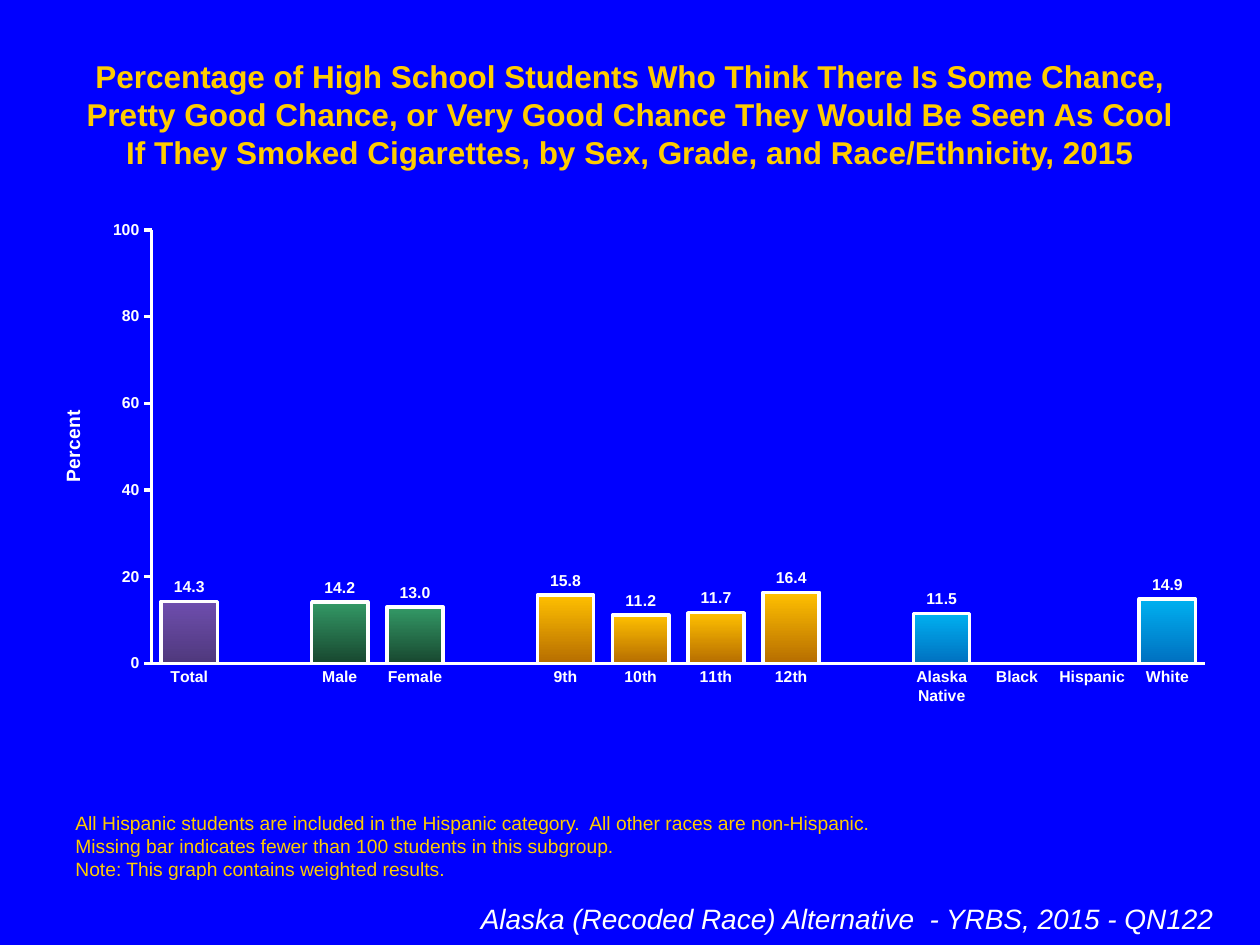
from lxml.etree import SubElement
from pptx import Presentation
from pptx.chart.data import CategoryChartData
from pptx.dml.color import RGBColor
from pptx.enum.chart import XL_CHART_TYPE, XL_LABEL_POSITION, XL_TICK_MARK
from pptx.enum.text import MSO_ANCHOR, PP_ALIGN
from pptx.oxml.ns import qn
from pptx.util import Pt

PX = 914400 // 126
FONT = "Arial"
WHITE, GOLD, BLUE = "FFFFFF", "FFCC00", "0000FF"
PURPLE_FADE = ("6E4EAE", "4F387C")
GREEN_FADE = ("339966", "18472F")
AMBER_FADE = ("FFC000", "B66D00")
SKY_FADE = ("00B0F0", "0070C0")
GROUPS = [
    (PURPLE_FADE, [("Total", 14.3)]),
    (GREEN_FADE, [("Male", 14.2), ("Female", 13.0)]),
    (AMBER_FADE, [("9th", 15.8), ("10th", 11.2), ("11th", 11.7), ("12th", 16.4)]),
    (SKY_FADE, [("Alaska Native", 11.5), ("Black", None), ("Hispanic", None), ("White", 14.9)]),
]
TITLE = (
    "Percentage of High School Students Who Think There Is Some Chance, "
    "Pretty Good Chance, or Very Good Chance They Would Be Seen As Cool "
    "If They Smoked Cigarettes, by Sex, Grade, and Race/Ethnicity, 2015"
)
NOTES = [
    "All Hispanic students are included in the Hispanic category.  All other races are non-Hispanic.",
    "Missing bar indicates fewer than 100 students in this subgroup.",
    "Note: This graph contains weighted results.",
]
SOURCE = "Alaska (Recoded Race) Alternative  - YRBS, 2015 - QN122"


def color(value):
    """Turn a hex string into a colour."""
    return RGBColor.from_string(value)


def style_font(font, size, value=WHITE, bold=False, italic=False):
    """Set the face, size, colour and weight of a font."""
    font.name, font.size, font.bold, font.italic = FONT, Pt(size), bold, italic
    font.color.rgb = color(value)


def style_line(line):
    """Give a line the white stroke shared by axes and bars."""
    line.color.rgb = color(WHITE)
    line.width = Pt(2)


def write_text(box, place, lines, align=PP_ALIGN.LEFT, anchor=MSO_ANCHOR.TOP, **style):
    """Place a text shape and write one paragraph per line."""
    box.left, box.top, box.width, box.height = (length * PX for length in place)
    frame = box.text_frame
    frame.word_wrap = True
    frame.vertical_anchor = anchor
    frame.text = "\n".join(lines)
    for para in frame.paragraphs:
        para.alignment = align
        para.line_spacing = 1.0
        para.space_before = Pt(0)
        for span in para.runs:
            style_font(span.font, **style)


def add_text(page, place, lines, **style):
    """Add a text box to the page."""
    write_text(page.shapes.add_textbox(0, 0, 0, 0), place, lines, **style)


def set_layout(owner, position, **values):
    """Fix the place of a chart part as fractions of the chart."""
    layout = owner.find(qn("c:layout"))
    if layout is None:
        layout = owner.makeelement(qn("c:layout"))
        owner.insert(position, layout)
    manual = SubElement(layout, qn("c:manualLayout"))
    for name, value in values.items():
        SubElement(manual, qn(f"c:{name}")).set("val", str(value))


def style_axis(axis, tick):
    """Format an axis line, its ticks and its labels."""
    axis.has_major_gridlines = False
    axis.major_tick_mark = tick
    axis.minor_tick_mark = XL_TICK_MARK.NONE
    style_line(axis.format.line)
    style_font(axis.tick_labels.font, 9, bold=True)


def add_axis_title(axis, text):
    """Add an upward reading title to the value axis."""
    title = axis.axis_title
    title.text_frame.text = text
    style_font(title.text_frame.paragraphs[0].runs[0].font, 11, bold=True)
    body = title._element.find(".//" + qn("a:bodyPr"))
    body.set("rot", "-5400000")
    body.set("vert", "horz")
    set_layout(title._element, 1, xMode="edge", yMode="edge", x=0.02, y=0.39)


def paint_bar(point, fade):
    """Fill a bar from top to bottom and outline it."""
    fill = point.format.fill
    fill.gradient()
    fill.gradient_angle = 270
    for stop, value, position in zip(fill.gradient_stops, fade, (0, 1)):
        stop.color.rgb = color(value)
        stop.position = position
    style_line(point.format.line)


def list_bars():
    """List label, value and fade of each slot, with a gap between groups."""
    bars = []
    for fade, members in GROUPS:
        if bars:
            bars.append(("", None, None))
        bars += [(label, value, fade) for label, value in members]
    return bars


def add_bar_chart(page, place):
    """Add the column chart of percentages by subgroup."""
    bars = list_bars()
    data = CategoryChartData(number_format="#,##0.0")
    data.categories = [label for label, _, _ in bars]
    data.add_series("Series 1", [value for _, value, _ in bars])
    lengths = [length * PX for length in place]
    chart = page.shapes.add_chart(XL_CHART_TYPE.COLUMN_CLUSTERED, *lengths, data).chart
    chart.has_legend = False
    chart.has_title = False
    style_font(chart.font, 18)

    plot = chart.plots[0]
    plot.gap_width, plot.overlap, plot.vary_by_categories = 34, 100, False
    plot.has_data_labels = True
    labels = plot.data_labels
    labels.show_value = True
    labels.number_format, labels.number_format_is_linked = "#,##0.0", False
    labels.position = XL_LABEL_POSITION.OUTSIDE_END
    style_font(labels.font, 9, bold=True)
    for index, (_, _, fade) in enumerate(bars):
        if fade:
            paint_bar(plot.series[0].points[index], fade)

    style_axis(chart.category_axis, XL_TICK_MARK.NONE)
    values = chart.value_axis
    style_axis(values, XL_TICK_MARK.OUTSIDE)
    values.minimum_scale, values.maximum_scale, values.major_unit = 0, 100, 20
    values.tick_labels.number_format = "General"
    values.tick_labels.number_format_is_linked = False
    add_axis_title(values, "Percent")
    area = chart._chartSpace.find(".//" + qn("c:plotArea"))
    set_layout(area, 0, layoutTarget="inner", xMode="edge", yMode="edge",
               x=0.1, y=0.04, w=0.88, h=0.86)


def main():
    """Build the slide and save the deck."""
    deck = Presentation()
    deck.slide_width, deck.slide_height = 1260 * PX, 945 * PX
    page = deck.slides.add_slide(deck.slide_layouts[5])
    page.background.fill.solid()
    page.background.fill.fore_color.rgb = color(BLUE)
    write_text(page.shapes.title, (63, 51, 1134, 126), [TITLE],
               align=PP_ALIGN.CENTER, size=18, value=GOLD, bold=True)
    add_bar_chart(page, (32, 210, 1197, 504))
    add_text(page, (63, 805, 1134, 82), NOTES,
             anchor=MSO_ANCHOR.BOTTOM, size=11, value=GOLD)
    add_text(page, (116, 895, 1110, 47), [SOURCE],
             align=PP_ALIGN.RIGHT, size=16, italic=True)
    deck.save("out.pptx")


if __name__ == "__main__":
    main()
